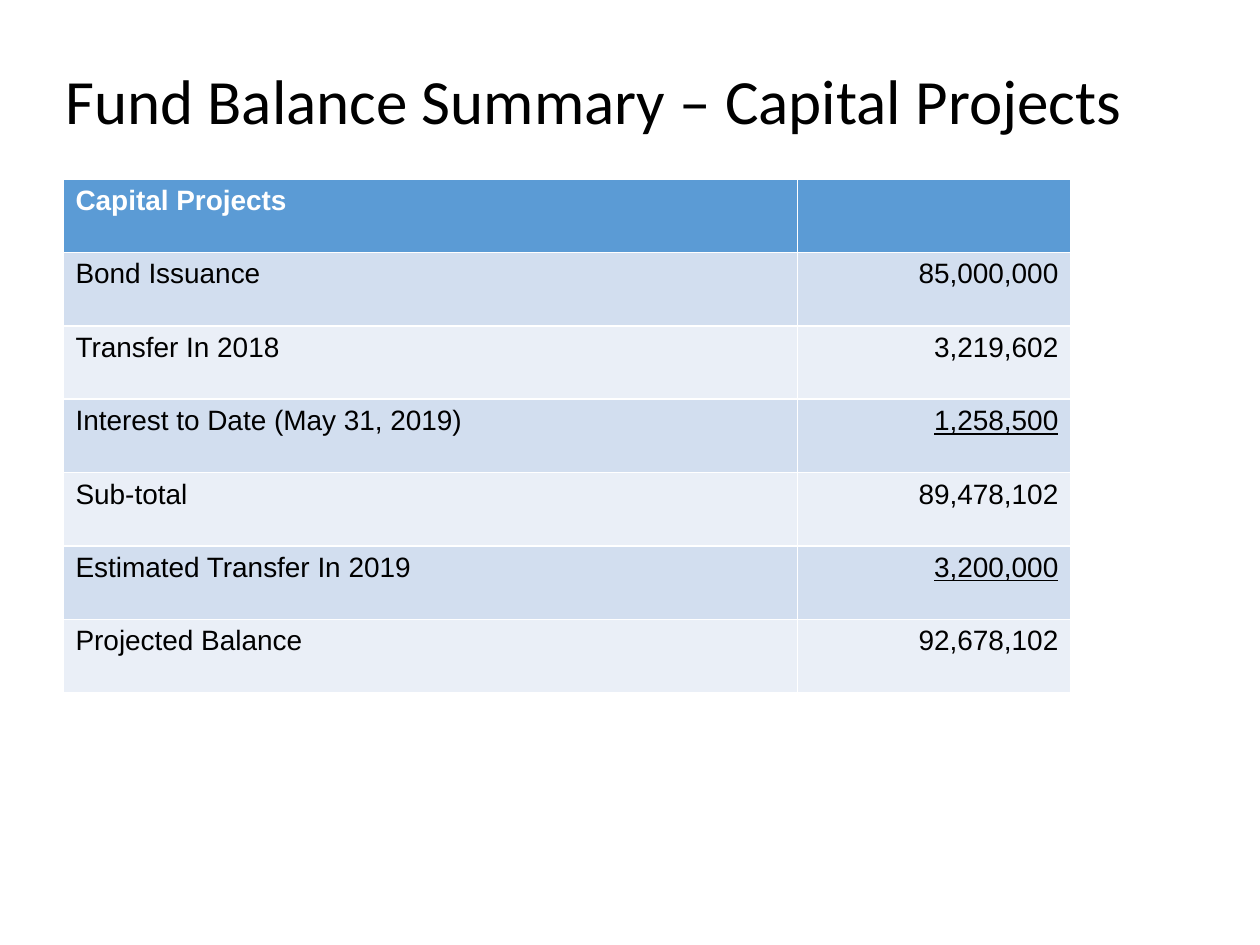
from pptx import Presentation
from pptx.dml.color import RGBColor
from pptx.enum.text import MSO_ANCHOR, PP_ALIGN
from pptx.util import Inches, Pt

COLORS = {
    "text": "000000",
    "header_text": "FFFFFF",
    "header": "5B9BD5",
    "band_dark": "D2DEEF",
    "band_light": "EAEFF7",
}
FUND_ROWS = [
    ("Capital Projects", ""),
    ("Bond Issuance", "85,000,000"),
    ("Transfer In 2018", "3,219,602"),
    ("Interest to Date (May 31, 2019)", "1,258,500"),
    ("Sub-total", "89,478,102"),
    ("Estimated Transfer In 2019", "3,200,000"),
    ("Projected Balance", "92,678,102"),
]
UNDERLINED_AMOUNTS = {"1,258,500", "3,200,000"}
COLUMN_WIDTHS = (5.83, 2.17)


def style_font(font, name, size, color, bold=False):
    font.name = name
    font.size = Pt(size)
    font.bold = bold
    font.color.rgb = RGBColor.from_string(COLORS[color])


def add_title(slide, left, top, width, height):
    title = slide.shapes.add_textbox(
        Inches(left), Inches(top), Inches(width), Inches(height)
    )
    frame = title.text_frame
    frame.word_wrap = True
    frame.vertical_anchor = MSO_ANCHOR.MIDDLE
    frame.text = "Fund Balance Summary – Capital Projects"
    heading = frame.paragraphs[0]
    heading.line_spacing = 0.9
    style_font(heading.runs[0].font, "Calibri", 36, "text")


def fill_cell(cell, text, row, column):
    is_header = row == 0
    band = "header" if is_header else ("band_light", "band_dark")[row % 2]
    cell.fill.solid()
    cell.fill.fore_color.rgb = RGBColor.from_string(COLORS[band])
    cell.text_frame.text = text
    entry = cell.text_frame.paragraphs[0]
    entry.alignment = PP_ALIGN.RIGHT if column else PP_ALIGN.LEFT
    color = "header_text" if is_header else "text"
    for run in entry.runs:
        style_font(run.font, "Arial", 16, color, bold=is_header)
        run.font.underline = text in UNDERLINED_AMOUNTS


def add_fund_table(slide, left, top, width, height):
    fund_table = slide.shapes.add_table(
        len(FUND_ROWS), len(COLUMN_WIDTHS),
        Inches(left), Inches(top), Inches(width), Inches(height),
    ).table
    for column, column_width in zip(fund_table.columns, COLUMN_WIDTHS):
        column.width = Inches(column_width)
    for row, entries in enumerate(FUND_ROWS):
        for column, text in enumerate(entries):
            fill_cell(fund_table.cell(row, column), text, row, column)


def main():
    deck = Presentation()
    deck.slide_width = Inches(10)
    deck.slide_height = Inches(7.5)
    slide = deck.slides.add_slide(deck.slide_layouts[6])
    add_title(slide, 0.42, 0.33, 9, 1)
    add_fund_table(slide, 0.5, 1.42, 8, 4.08)
    deck.save("out.pptx")


if __name__ == "__main__":
    main()
